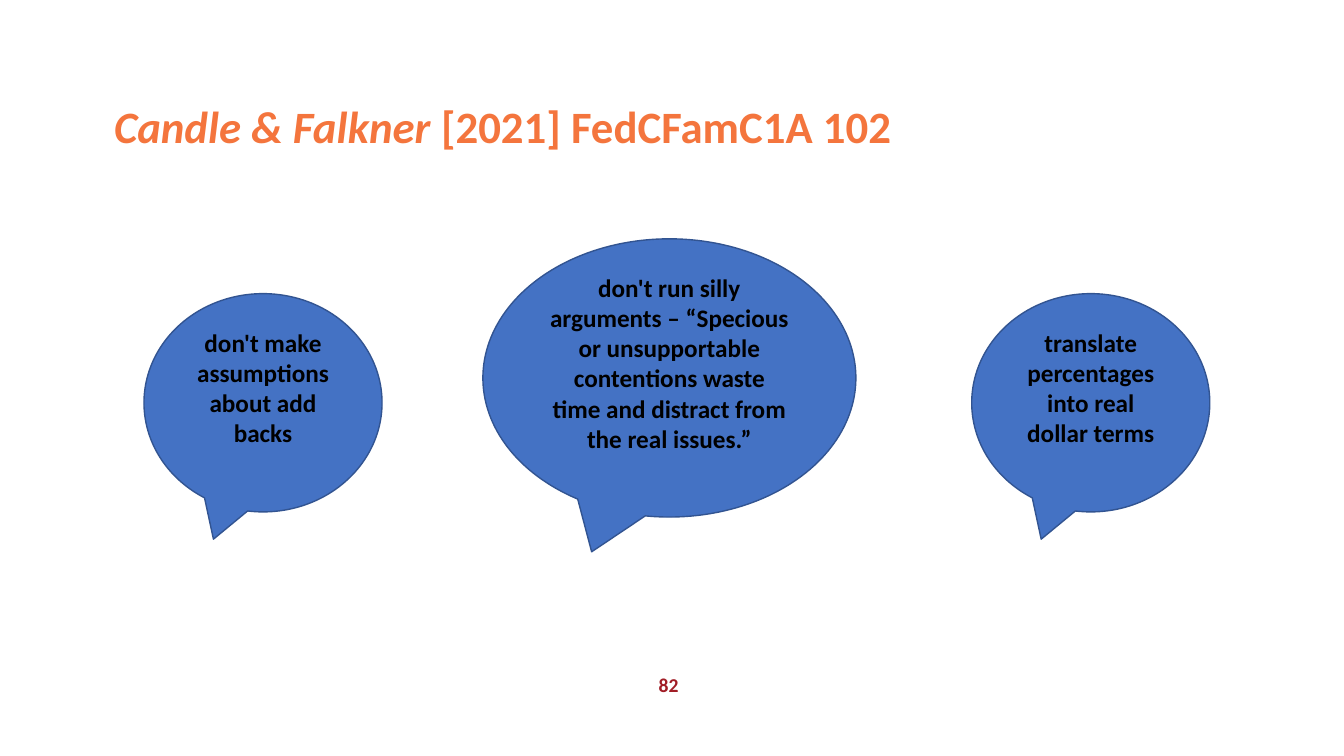
"""Build the slide of three speech-bubble lessons from a family law case."""
import dataclasses

import pptx
import pptx.dml.color
import pptx.enum.shapes
import pptx.enum.text
import pptx.slide
import pptx.text.text
import pptx.util

Cm = pptx.util.Cm
Pt = pptx.util.Pt
RGB = pptx.dml.color.RGBColor


@dataclasses.dataclass(frozen=True)
class Theme:
    font: str = "Calibri"
    heading: RGB = RGB(0xF4, 0x75, 0x3D)
    page: RGB = RGB(0xA1, 0x1D, 0x26)
    bubble: RGB = RGB(0x44, 0x72, 0xC4)
    outline: RGB = RGB(0x32, 0x54, 0x91)
    lesson: RGB = RGB(0, 0, 0)
    heading_size: int = 32
    lesson_size: int = 18
    page_size: int = 14


@dataclasses.dataclass(frozen=True)
class Box:
    left: float
    top: float
    width: float
    height: float

    def lengths(self) -> tuple[int, int, int, int]:
        return Cm(self.left), Cm(self.top), Cm(self.width), Cm(self.height)


@dataclasses.dataclass(frozen=True)
class Lesson:
    text: str
    box: Box


THEME = Theme()
LESSONS = (
    Lesson("don't make assumptions about add backs", Box(3.63, 7.4, 6, 5.5)),
    Lesson(
        "don't run silly arguments – “Specious or unsupportable contentions "
        "waste time and distract from the real issues.”",
        Box(12.17, 6.02, 9.4, 7.01),
    ),
    Lesson("translate percentages into real dollar terms", Box(24.49, 7.4, 6, 5.5)),
)


def style_runs(paragraph: pptx.text.text._Paragraph, size: int, color: RGB) -> None:
    for run in paragraph.runs:
        run.font.name = THEME.font
        run.font.size = Pt(size)
        run.font.bold = True
        run.font.color.rgb = color


def write_title(slide: pptx.slide.Slide) -> None:
    title = slide.shapes.title
    title.left, title.top, title.width, title.height = Box(2.62, 2.51, 28.5, 1.85).lengths()
    title.text_frame.vertical_anchor = pptx.enum.text.MSO_ANCHOR.TOP
    heading = title.text_frame.paragraphs[0]
    heading.text = "Candle & Falkner "
    heading.add_run().text = "[2021] FedCFamC1A 102"
    heading.alignment = pptx.enum.text.PP_ALIGN.LEFT
    heading.line_spacing = 0.9
    style_runs(heading, THEME.heading_size, THEME.heading)
    heading.runs[0].font.italic = True


def write_page_number(slide: pptx.slide.Slide) -> None:
    page = slide.shapes.add_textbox(*Box(14.22, 16.84, 5.26, 0.86).lengths())
    page.text_frame.word_wrap = True
    page.text_frame.text = "82"
    number = page.text_frame.paragraphs[0]
    number.alignment = pptx.enum.text.PP_ALIGN.CENTER
    style_runs(number, THEME.page_size, THEME.page)


def draw_lesson(slide: pptx.slide.Slide, lesson: Lesson) -> None:
    bubble = slide.shapes.add_shape(
        pptx.enum.shapes.MSO_SHAPE.OVAL_CALLOUT, *lesson.box.lengths()
    )
    bubble.shadow.inherit = False
    bubble.fill.solid()
    bubble.fill.fore_color.rgb = THEME.bubble
    bubble.line.color.rgb = THEME.outline
    bubble.line.width = Pt(1)
    frame = bubble.text_frame
    frame.word_wrap = True
    frame.vertical_anchor = pptx.enum.text.MSO_ANCHOR.MIDDLE
    frame.margin_bottom = Cm(0.9)
    frame.text = lesson.text
    advice = frame.paragraphs[0]
    advice.alignment = pptx.enum.text.PP_ALIGN.CENTER
    style_runs(advice, THEME.lesson_size, THEME.lesson)


def main() -> None:
    deck = pptx.Presentation()
    deck.slide_width, deck.slide_height = Cm(33.87), Cm(19.05)
    slide = deck.slides.add_slide(deck.slide_layouts.get_by_name("Title Only"))
    write_page_number(slide)
    write_title(slide)
    for lesson in LESSONS:
        draw_lesson(slide, lesson)
    deck.save("out.pptx")


if __name__ == "__main__":
    main()
